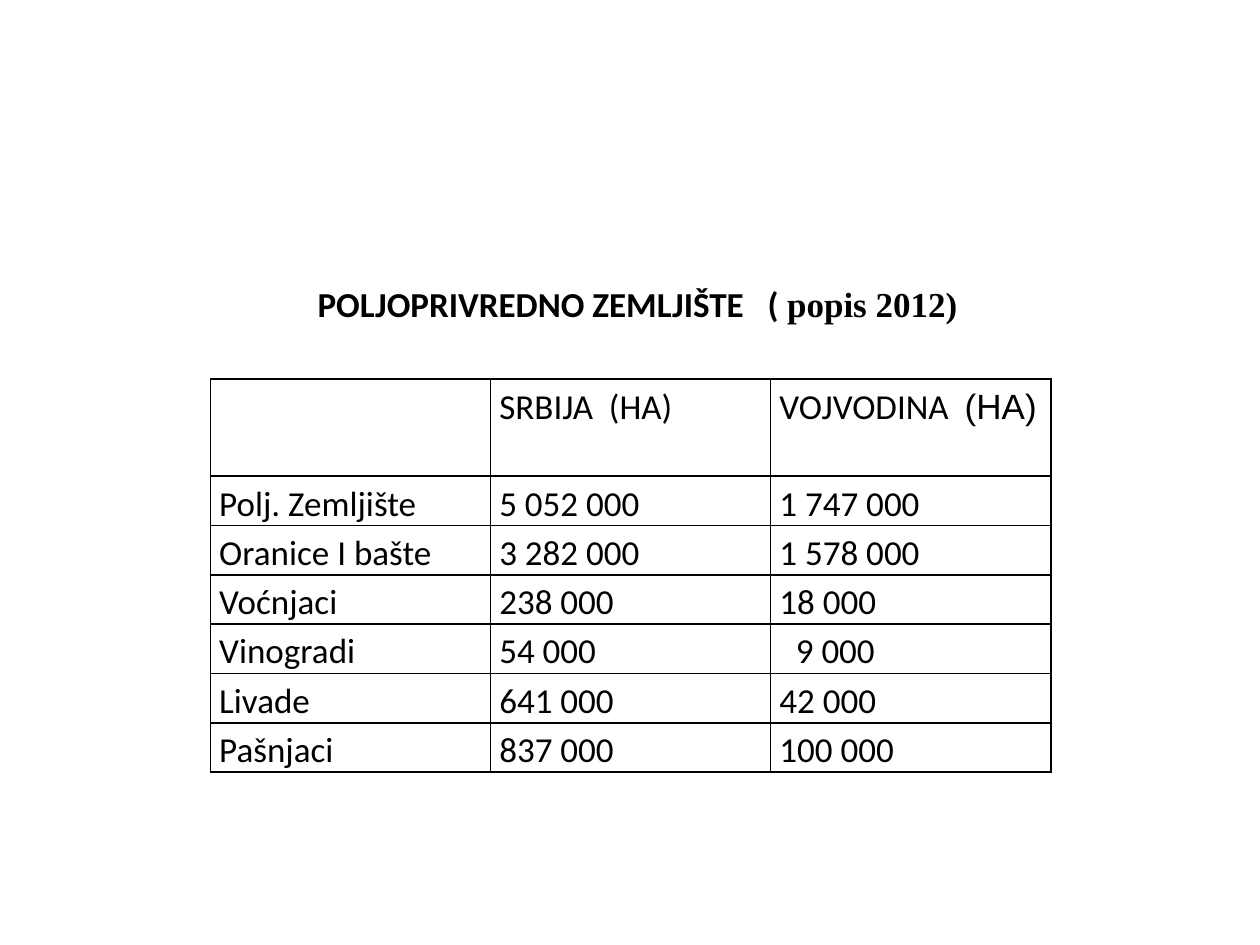
from dataclasses import dataclass

from lxml.etree import SubElement
from pptx import Presentation
from pptx.dml.color import RGBColor
from pptx.enum.text import MSO_ANCHOR, MSO_AUTO_SIZE, PP_ALIGN
from pptx.oxml.ns import qn
from pptx.util import Inches, Pt


@dataclass(frozen=True)
class Theme:
    ink: str = "000000"
    body_font: str = "Calibri"
    unit_font: str = "Arial"
    census_font: str = "Times New Roman"
    text_size: int = 20
    border_width: int = 1


THEME = Theme()

TITLE = [("POLJOPRIVREDNO ZEMLJIŠTE   ( ", THEME.body_font),
         ("popis 2012)", THEME.census_font)]
HEADER = [[],
          [("SRBIJA  (HA)", THEME.body_font)],
          [("VOJVODINA  ", THEME.body_font), ("(HA)", THEME.unit_font)]]
LAND_USE = [
    ("Polj. Zemljište", "5 052 000", "1 747 000"),
    ("Oranice I bašte", "3 282 000", "1 578 000"),
    ("Voćnjaci", "238 000", "18 000"),
    ("Vinogradi", "54 000", "9 000"),
    ("Livade", "641 000", "42 000"),
    ("Pašnjaci", "837 000", "100 000"),
]
INDENTED_VALUE = "9 000"


def apply_format(target, values):
    for name, value in values.items():
        setattr(target, name, value)


def add_runs(paragraph, pieces, bold):
    for wording, font_name in pieces:
        run = paragraph.add_run()
        run.text = wording
        apply_format(run.font, {"name": font_name, "size": Pt(THEME.text_size),
                                "bold": bold})
        run.font.color.rgb = RGBColor.from_string(THEME.ink)


def add_title(slide):
    title = slide.shapes.title
    apply_format(title, {"left": Inches(2.42), "top": Inches(2.19),
                         "width": Inches(7.89), "height": Inches(0.77)})
    apply_format(title.text_frame, {"word_wrap": True,
                                    "auto_size": MSO_AUTO_SIZE.NONE,
                                    "vertical_anchor": MSO_ANCHOR.TOP})
    heading = title.text_frame.paragraphs[0]
    heading.alignment = PP_ALIGN.LEFT
    add_runs(heading, TITLE, bold=True)


def add_borders(cell):
    properties = cell._tc.get_or_add_tcPr()
    for position, side in enumerate(("lnL", "lnR", "lnT", "lnB")):
        border = SubElement(properties, qn(f"a:{side}"),
                            w=str(Pt(THEME.border_width)))
        fill = SubElement(border, qn("a:solidFill"))
        SubElement(fill, qn("a:srgbClr"), val=THEME.ink)
        # Borders come before the fill in the cell properties
        properties.insert(position, border)


def fill_cell(cell, pieces, indent=0):
    cell.fill.background()
    apply_format(cell, {"margin_left": Inches(0.07 + indent),
                        "margin_right": Inches(0.07),
                        "margin_top": 0, "margin_bottom": 0})
    paragraph = cell.text_frame.paragraphs[0]
    paragraph.line_spacing = 1.15
    add_runs(paragraph, pieces, bold=False)
    add_borders(cell)


def add_land_table(slide):
    rows = [HEADER] + [[[(wording, THEME.body_font)] for wording in entry]
                       for entry in LAND_USE]
    table = slide.shapes.add_table(len(rows), len(HEADER), Inches(1.67), Inches(3.01),
                                   Inches(6.67), Inches(3.07)).table
    apply_format(table, {"first_row": False, "horz_banding": False})
    for column in table.columns:
        column.width = Inches(6.67 / len(HEADER))
    for row_index, row in enumerate(rows):
        # The header is as tall as two body rows
        table.rows[row_index].height = Inches(0.38 if row_index else 0.77)
        for column_index, pieces in enumerate(row):
            indented = any(wording == INDENTED_VALUE for wording, _ in pieces)
            fill_cell(table.cell(row_index, column_index), pieces,
                      indent=0.13 if indented else 0)


def main():
    presentation = Presentation()
    apply_format(presentation, {"slide_width": Inches(10),
                                "slide_height": Inches(7.5)})
    title_only = presentation.slide_layouts[5]
    slide = presentation.slides.add_slide(title_only)

    # Heading above the table
    add_title(slide)
    # Land use in hectares
    add_land_table(slide)

    presentation.save("out.pptx")


if __name__ == "__main__":
    main()
